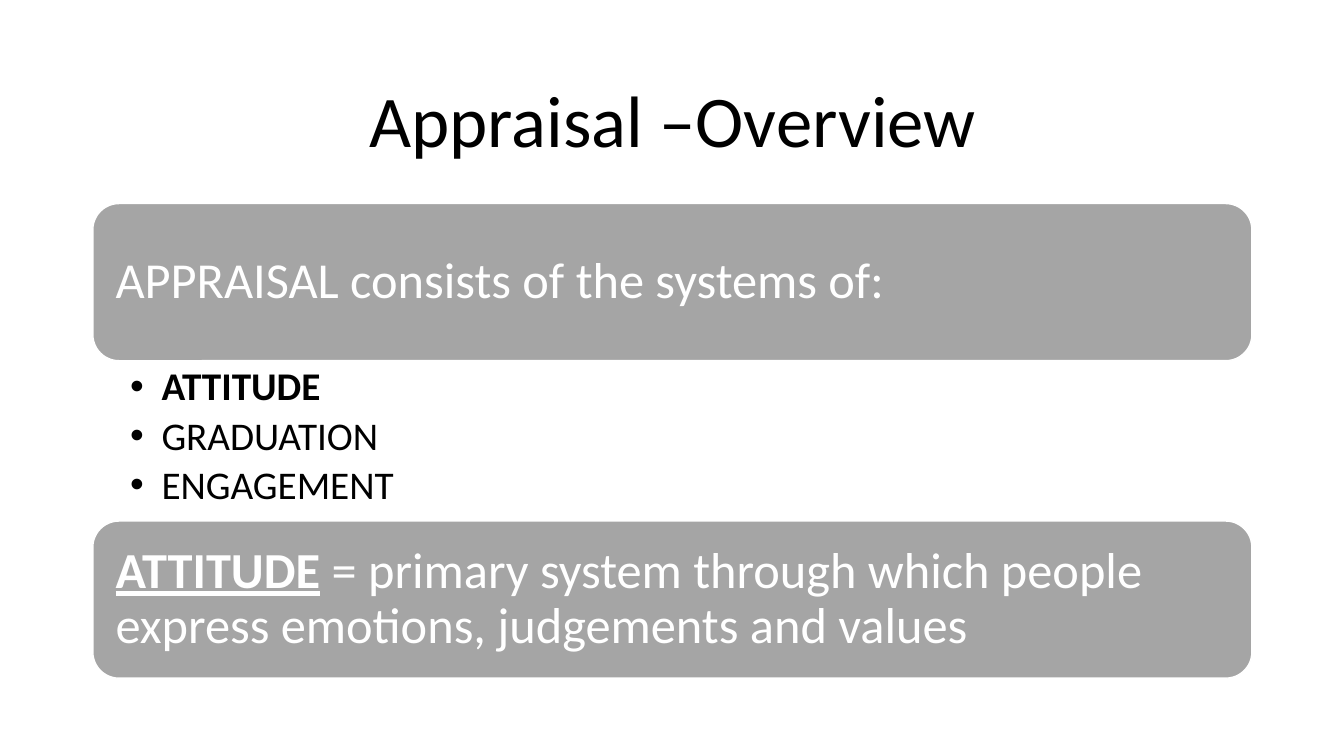
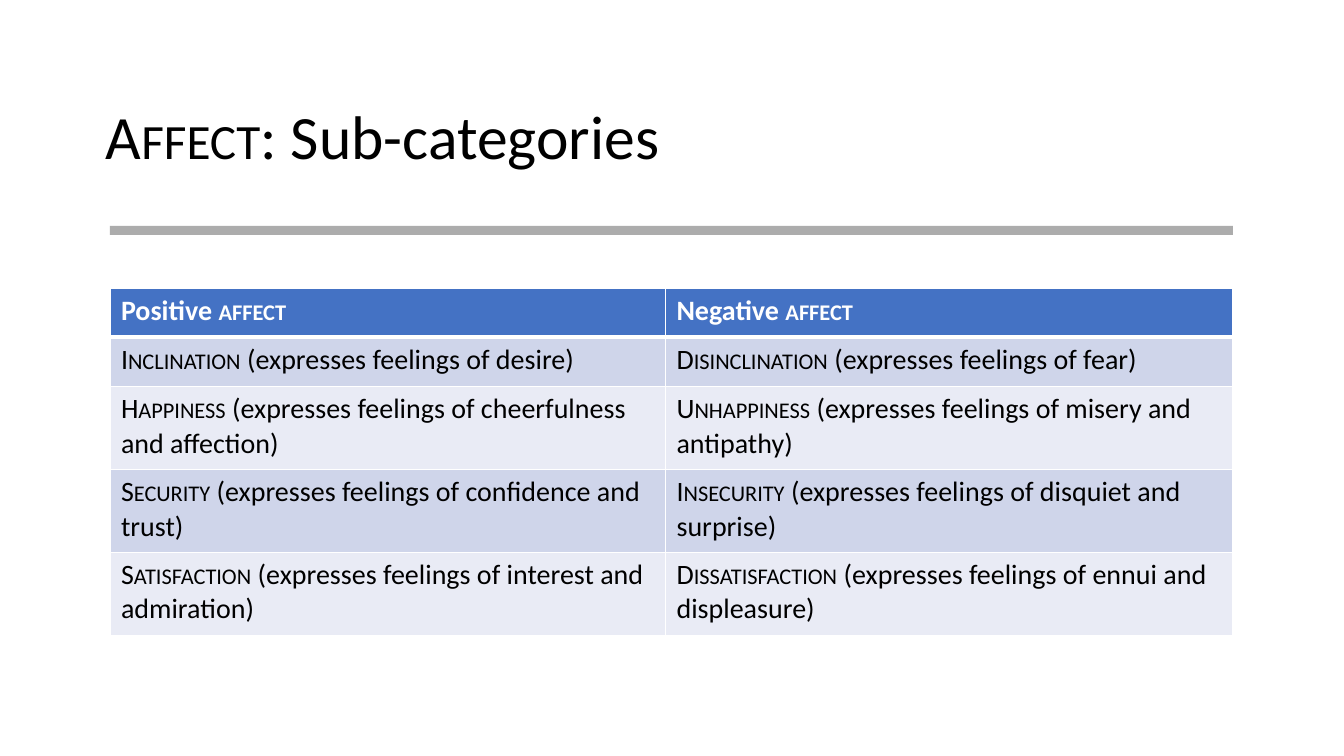
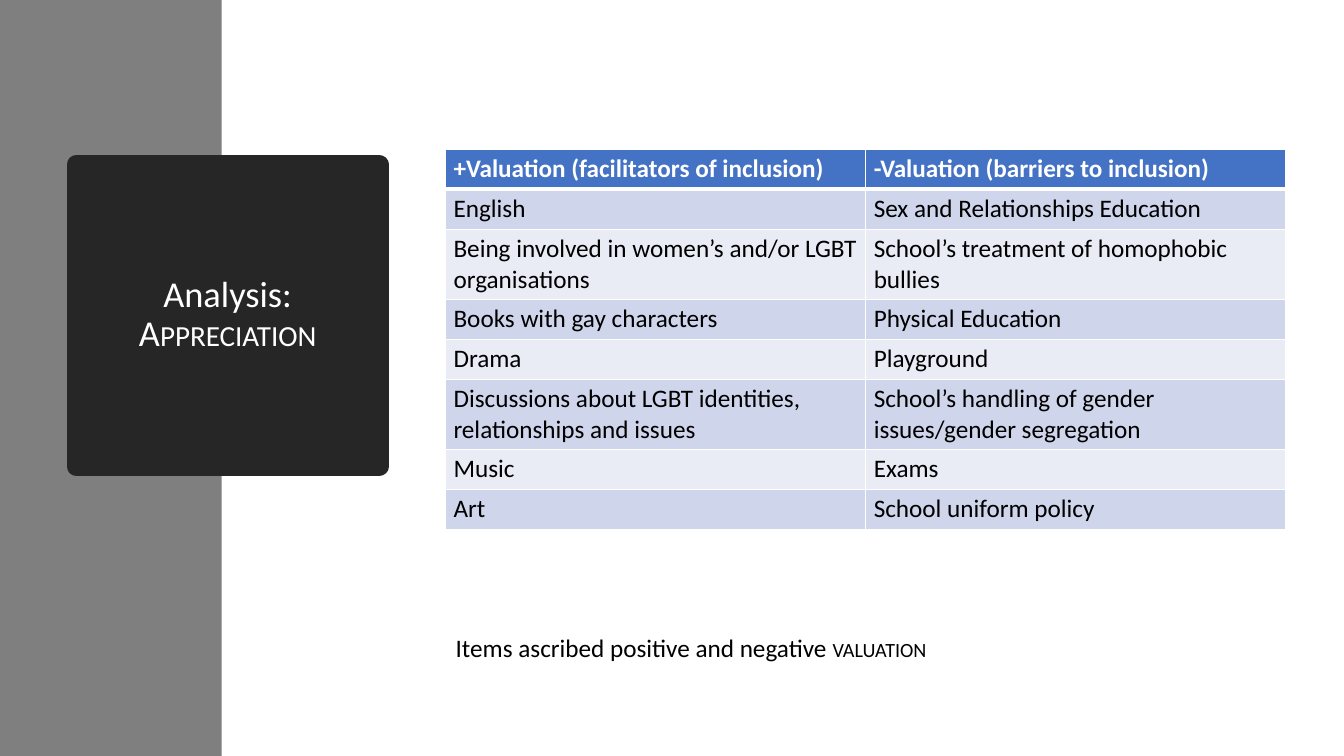
from dataclasses import dataclass

from lxml import etree
from pptx import Presentation
from pptx.dml.color import RGBColor
from pptx.enum.shapes import MSO_SHAPE
from pptx.enum.text import MSO_ANCHOR, MSO_AUTO_SIZE, PP_ALIGN
from pptx.oxml.ns import qn
from pptx.util import Cm, Pt

LEFT, CENTER = PP_ALIGN.LEFT, PP_ALIGN.CENTER
MIDDLE = MSO_ANCHOR.MIDDLE
NO_AUTOFIT = MSO_AUTO_SIZE.NONE
RECTANGLE, ROUNDED = MSO_SHAPE.RECTANGLE, MSO_SHAPE.ROUNDED_RECTANGLE
TITLE_AND_BODY, TITLE_ONLY = 1, 5


@dataclass(frozen=True)
class Theme:
    font: str = "Calibri"
    black: str = "000000"
    white: str = "FFFFFF"
    panel: str = "A5A5A5"
    rule: str = "808080"
    sidebar: str = "7F7F7F"
    badge: str = "262626"
    header: str = "4472C4"
    bands: tuple = ("E9EBF5", "CFD5EA")
    overview_title: int = 52
    title: int = 44
    badge_title: int = 26
    panel_text: int = 36
    list_text: int = 28
    affect_table: int = 20
    body: int = 18


theme = Theme()


def write(para, text, size=theme.body, color=theme.black, bold=False,
          underline=False, align=LEFT, spacing=0.9, before=0, after=0):
    """Add text to a paragraph; words between asterisks become small capitals."""
    para.alignment = align
    para.line_spacing = spacing
    para.space_before, para.space_after = Pt(before), Pt(after)
    for index, piece in enumerate(text.split("*")):
        if not piece:
            continue
        span = para.add_run()
        span.text = piece
        font = span.font
        font.name, font.size = theme.font, Pt(size)
        font.bold, font.underline = bold, underline
        font.color.rgb = RGBColor.from_string(color)
        if index % 2:
            span._r.get_or_add_rPr().set("cap", "small")


def add_grid(page, left, top, widths, heights, rows, size, margin_x, margin_y):
    """Add a table with a header row, banded body rows and white borders."""
    table = page.shapes.add_table(len(rows), len(widths), Cm(left), Cm(top),
                                  Cm(sum(widths)), Cm(sum(heights))).table
    for column, width in zip(table.columns, widths):
        column.width = Cm(width)
    for number, (row, height) in enumerate(zip(rows, heights)):
        table.rows[number].height = Cm(height)
        is_header = number == 0
        borders = {"lnL": 1, "lnR": 1, "lnT": 3 if number == 1 else 1,
                   "lnB": 3 if is_header else 1}
        for column, text in enumerate(row):
            cell = table.cell(number, column)
            cell.margin_left = cell.margin_right = Cm(margin_x)
            cell.margin_top = cell.margin_bottom = Cm(margin_y)
            properties = cell._tc.get_or_add_tcPr()
            for side, points in borders.items():
                line = etree.SubElement(properties, qn(f"a:{side}"), w=str(Pt(points)))
                fill = etree.SubElement(line, qn("a:solidFill"))
                etree.SubElement(fill, qn("a:srgbClr"), val=theme.white)
            cell.fill.solid()
            cell.fill.fore_color.rgb = RGBColor.from_string(
                theme.header if is_header else theme.bands[number % 2])
            write(cell.text_frame.paragraphs[0], text, size=size, bold=is_header,
                  color=theme.white if is_header else theme.black, spacing=1)


deck = Presentation()
deck.slide_width, deck.slide_height = Cm(33.87), Cm(19.05)

# Pages and their titles
titles = [
    (TITLE_AND_BODY, "Appraisal –Overview", (2.34, 1.55, 29.21, 3.15),
     theme.overview_title, theme.black, CENTER),
    (TITLE_ONLY, "*Affect*: Sub-categories", (2.41, 1.68, 29.03, 3.68),
     theme.title, theme.black, LEFT),
    (TITLE_AND_BODY, "Analysis: *Appreciation*", (1.93, 4.14, 7.62, 7.62),
     theme.badge_title, theme.white, CENTER),
]
pages = []
for layout, text, place, size, color, align in titles:
    page = deck.slides.add_slide(deck.slide_layouts[layout])
    title = page.shapes.title
    title.left, title.top, title.width, title.height = map(Cm, place)
    title.text_frame.auto_size = NO_AUTOFIT
    title.text_frame.vertical_anchor = MIDDLE
    write(title.text_frame.paragraphs[0], text, size=size, color=color, align=align)
    pages.append(page)
overview, affect, appreciation = pages

# Overview: two panels with a list between them
panels = [
    (5.13, [("APPRAISAL consists of the systems of:", False)]),
    (13.13, [("ATTITUDE", True),
             (" = primary system through which people express emotions, "
              "judgements and values", False)]),
]
for top, pieces in panels:
    panel = overview.shapes.add_shape(ROUNDED, Cm(2.34), Cm(top), Cm(29.21), Cm(3.96))
    panel.shadow.inherit = False
    panel.fill.solid()
    panel.fill.fore_color.rgb = RGBColor.from_string(theme.panel)
    panel.line.color.rgb = RGBColor.from_string(theme.white)
    panel.line.width = Pt(1)
    frame = panel.text_frame
    frame.word_wrap = True
    frame.vertical_anchor = MIDDLE
    frame.margin_left = frame.margin_right = Cm(0.38)
    frame.margin_top = frame.margin_bottom = Cm(0.38)
    for text, stressed in pieces:
        write(frame.paragraphs[0], text, size=theme.panel_text, color=theme.white,
              bold=stressed, underline=stressed)

systems = overview.placeholders[1]
systems.left, systems.top, systems.width, systems.height = map(
    Cm, (2.34, 9.12, 29.21, 4.04))
frame = systems.text_frame
frame.auto_size = NO_AUTOFIT
frame.margin_left, frame.margin_right = Cm(0.94), Cm(0.71)
for index, name in enumerate(["ATTITUDE", "GRADUATION", "ENGAGEMENT"]):
    para = frame.add_paragraph() if index else frame.paragraphs[0]
    write(para, name, size=theme.list_text, bold=index == 0, after=5)
    properties = para._p.get_or_add_pPr()
    properties.set("marL", str(Cm(0.79)))
    properties.set("indent", str(Cm(-0.79)))
    etree.SubElement(properties, qn("a:buChar"), char="•")

# Affect: rule and table
rule = affect.shapes.add_shape(RECTANGLE, Cm(2.77), Cm(5.69), Cm(28.3), Cm(0.23))
rule.shadow.inherit = False
rule.line.fill.background()
rule.fill.solid()
rule.fill.fore_color.rgb = RGBColor.from_string(theme.rule)
rule_color = rule._element.spPr.find(qn("a:solidFill")).find(qn("a:srgbClr"))
etree.SubElement(rule_color, qn("a:alpha"), val="65000")

feelings = [
    ("Inclination", "desire", "Disinclination", "fear"),
    ("Happiness", "cheerfulness and affection", "Unhappiness", "misery and antipathy"),
    ("Security", "confidence and trust", "Insecurity", "disquiet and surprise"),
    ("Satisfaction", "interest and admiration",
     "Dissatisfaction", "ennui and displeasure"),
]
affect_rows = [("Positive *affect*", "Negative *affect*")]
for good, good_feeling, bad, bad_feeling in feelings:
    affect_rows.append((f"*{good}* (expresses feelings of {good_feeling})",
                        f"*{bad}* (expresses feelings of {bad_feeling})"))
add_grid(affect, 2.77, 7.26, [14, 14.3], [1.24] * 2 + [2.09] * 3, affect_rows,
         size=theme.affect_table, margin_x=0.28, margin_y=0.14)

# Appreciation: sidebar, badge title, table and caption
sidebar = appreciation.shapes.add_shape(RECTANGLE, 0, 0, Cm(5.59), deck.slide_height)
sidebar.shadow.inherit = False
sidebar.line.fill.background()
sidebar.fill.solid()
sidebar.fill.fore_color.rgb = RGBColor.from_string(theme.sidebar)
appreciation.shapes._spTree.insert(2, sidebar._element)

badge = appreciation.shapes.title
badge.fill.solid()
badge.fill.fore_color.rgb = RGBColor.from_string(theme.badge)
badge.line.color.rgb = RGBColor.from_string(theme.badge)
badge.line.width = Pt(13.75)
etree.SubElement(badge._element.spPr.find(qn("a:ln")), qn("a:round"))

caption = appreciation.placeholders[1]
caption.left, caption.top, caption.width, caption.height = map(
    Cm, (11.23, 15.9, 19.96, 1.27))
caption.text_frame.auto_size = NO_AUTOFIT
para = caption.text_frame.paragraphs[0]
write(para, "Items ascribed positive and negative *valuation*", before=10)
properties = para._p.get_or_add_pPr()
properties.set("marL", "0")
properties.set("indent", "0")
etree.SubElement(properties, qn("a:buNone"))

valuation_rows = [
    ("+Valuation (facilitators of inclusion)", "-Valuation (barriers to inclusion)"),
    ("English", "Sex and Relationships Education"),
    ("Being involved in women’s and/or LGBT organisations",
     "School’s treatment of homophobic bullies"),
    ("Books with gay characters", "Physical Education"),
    ("Drama", "Playground"),
    ("Discussions about LGBT identities, relationships and issues",
     "School’s handling of gender issues/gender segregation"),
    ("Music", "Exams"),
    ("Art", "School uniform policy"),
]
single, double = 1.01, 1.76
add_grid(appreciation, 11.23, 3.76, [10.59] * 2,
         [single, single, double, single, single, double, single, single],
         valuation_rows, size=theme.body, margin_x=0.2, margin_y=0.1)

deck.save("out.pptx")
